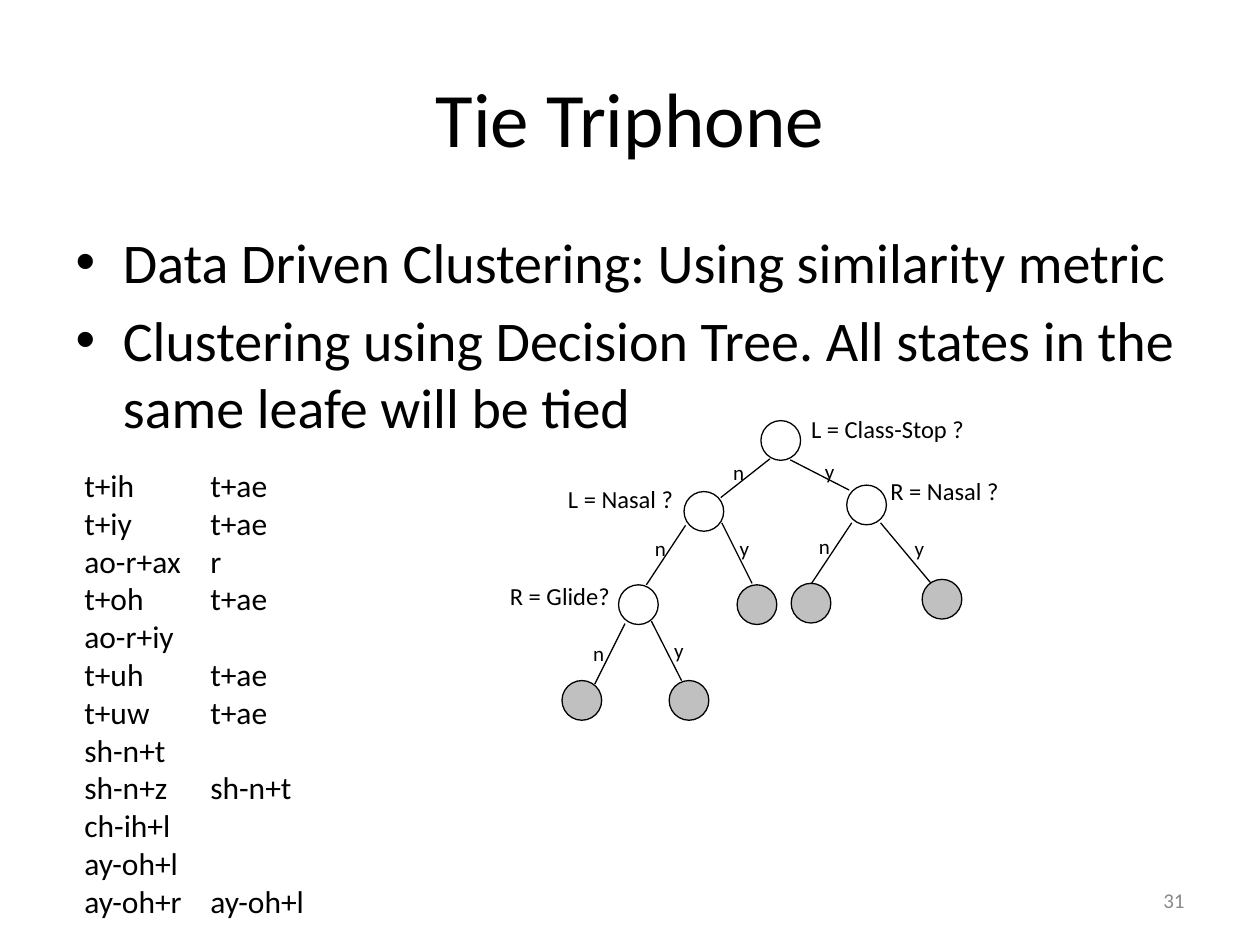
from dataclasses import dataclass
from typing import Optional

from lxml.etree import SubElement
from pptx import Presentation
from pptx.dml.color import RGBColor
from pptx.enum.shapes import MSO_CONNECTOR as Connector, MSO_SHAPE as Shape
from pptx.enum.text import MSO_ANCHOR as Anchor, MSO_AUTO_SIZE as AutoSize, PP_ALIGN as Align
from pptx.oxml.ns import qn
from pptx.slide import Slide
from pptx.text.text import TextFrame
from pptx.util import Cm, Pt

Point = tuple[float, float]


@dataclass(frozen=True)
class Theme:
    """Colours, type sizes and shared dimensions of the slide."""
    font: str = "Calibri"
    ink: RGBColor = RGBColor(0x00, 0x00, 0x00)
    leaf: RGBColor = RGBColor(0xC0, 0xC0, 0xC0)
    muted: RGBColor = RGBColor(0x89, 0x89, 0x89)
    title: int = 44
    body: int = 32
    triphone: int = 18
    question: int = 14
    answer: int = 12
    page: int = 12
    stroke: float = 0.75
    node: float = 0.8
    tab: float = 2.54


@dataclass(frozen=True)
class Node:
    """A tree node; one without a question is a leaf."""
    corner: Point
    question: str = ""
    question_corner: Optional[Point] = None


@dataclass(frozen=True)
class Branch:
    """A line between two nodes and its yes or no answer."""
    start: Point
    end: Point
    answer: str
    answer_corner: Point


THEME = Theme()

BULLETS = (
    "Data Driven Clustering: Using similarity metric",
    "Clustering using Decision Tree. All states in the same leafe will be tied",
)

TRIPHONES = (
    ("t+ih", "t+ae"), ("t+iy", "t+ae"), ("ao-r+ax", "r"), ("t+oh", "t+ae"),
    ("ao-r+iy",), ("t+uh", "t+ae"), ("t+uw", "t+ae"), ("sh-n+t",),
    ("sh-n+z", "sh-n+t"), ("ch-ih+l",), ("ay-oh+l",), ("ay-oh+r", "ay-oh+l"),
)

NODES = (
    Node((15.34, 8.48), "L = Class-Stop ?", (16.1, 8.23)),
    Node((13.79, 9.91), "L = Nasal ?", (11.2, 9.63)),
    Node((17.07, 9.78), "R = Nasal ?", (17.7, 9.47)),
    Node((12.47, 11.79), "R = Glide?", (10.03, 11.58)),
    Node((14.86, 11.79)),
    Node((15.95, 11.76)),
    Node((18.59, 11.68)),
    Node((11.33, 13.72)),
    Node((13.49, 13.72)),
)

BRANCHES = (
    Branch((15.52, 9.25), (14.53, 10.03), "n", (14.53, 9.14)),
    Branch((15.93, 9.27), (17.12, 9.88), "y", (16.38, 9.12)),
    Branch((13.82, 10.59), (13.03, 11.79), "n", (12.95, 10.67)),
    Branch((14.55, 10.54), (15.16, 11.76), "y", (14.66, 10.67)),
    Branch((17.17, 10.54), (16.36, 11.76), "n", (16.26, 10.64)),
    Branch((17.75, 10.54), (18.77, 11.76), "y", (18.19, 10.67)),
    Branch((12.6, 12.57), (11.99, 13.79), "n", (11.71, 12.78)),
    Branch((13.13, 12.52), (13.74, 13.72), "y", (13.34, 12.73)),
)


def format_text(frame: TextFrame, size: int, colour: RGBColor = THEME.ink) -> None:
    """Give every run the theme font with one size and colour."""
    for paragraph in frame.paragraphs:
        for run in paragraph.runs:
            run.font.name = THEME.font
            run.font.size = Pt(size)
            run.font.color.rgb = colour


def fill_placeholder(slide: Slide, index: int, text: str, size: int,
                     top: float, height: float) -> None:
    """Write, place and format one template placeholder."""
    placeholder = slide.placeholders[index]
    placeholder.left, placeholder.top = Cm(1.27), Cm(top)
    placeholder.width, placeholder.height = Cm(22.86), Cm(height)
    placeholder.text_frame.text = text
    placeholder.text_frame.auto_size = AutoSize.NONE
    format_text(placeholder.text_frame, size)


def add_text(slide: Slide, text: str, corner: Point, extent: Point, size: int,
             colour: RGBColor = THEME.ink) -> TextFrame:
    """Add a wrapping text box and return its frame."""
    frame = slide.shapes.add_textbox(*map(Cm, corner + extent)).text_frame
    frame.word_wrap = True
    frame.text = text
    format_text(frame, size, colour)
    return frame


def add_triphones(slide: Slide) -> None:
    """List the triphones in two tabbed columns."""
    text = "\n".join("\t".join(row) for row in TRIPHONES)
    frame = add_text(slide, text, (1.45, 9.27), (12.7, 9.5), THEME.triphone)
    for paragraph in frame.paragraphs:
        stops = SubElement(paragraph._p.get_or_add_pPr(), qn("a:tabLst"))
        SubElement(stops, qn("a:tab"), pos=str(Cm(THEME.tab)), algn="l")


def add_branch(slide: Slide, branch: Branch) -> None:
    """Draw one branch with its answer."""
    ends = map(Cm, branch.start + branch.end)
    line = slide.shapes.add_connector(Connector.STRAIGHT, *ends)
    line.line.color.rgb = THEME.ink
    line.line.width = Pt(THEME.stroke)
    SubElement(line._element.spPr, qn("a:effectLst"))
    add_text(slide, branch.answer, branch.answer_corner, (1.19, 0.76), THEME.answer)


def add_node(slide: Slide, node: Node) -> None:
    """Draw a question node, or a filled leaf."""
    extent = (THEME.node, THEME.node)
    circle = slide.shapes.add_shape(Shape.OVAL, *map(Cm, node.corner + extent))
    circle.shadow.inherit = False
    circle.line.color.rgb = THEME.ink
    circle.line.width = Pt(THEME.stroke)
    if node.question_corner:
        circle.fill.background()
        add_text(slide, node.question, node.question_corner, (4.29, 0.84), THEME.question)
    else:
        circle.fill.solid()
        circle.fill.fore_color.rgb = THEME.leaf


def add_page_number(slide: Slide) -> None:
    """Put the page number at the lower right."""
    frame = add_text(slide, "31", (18.2, 17.65), (5.93, 1.01), THEME.page, THEME.muted)
    frame.vertical_anchor = Anchor.MIDDLE
    frame.paragraphs[0].alignment = Align.RIGHT


def main() -> None:
    """Build and save the slide."""
    deck = Presentation()
    deck.slide_width, deck.slide_height = Cm(25.4), Cm(19.05)
    slide = deck.slides.add_slide(deck.slide_layouts[1])
    fill_placeholder(slide, 0, "Tie Triphone", THEME.title, 0.76, 3.18)
    fill_placeholder(slide, 1, "\n".join(BULLETS), THEME.body, 4.45, 12.57)
    add_triphones(slide)
    for branch in BRANCHES:
        add_branch(slide, branch)
    for node in NODES:
        add_node(slide, node)
    add_page_number(slide)
    deck.save("out.pptx")


if __name__ == "__main__":
    main()
